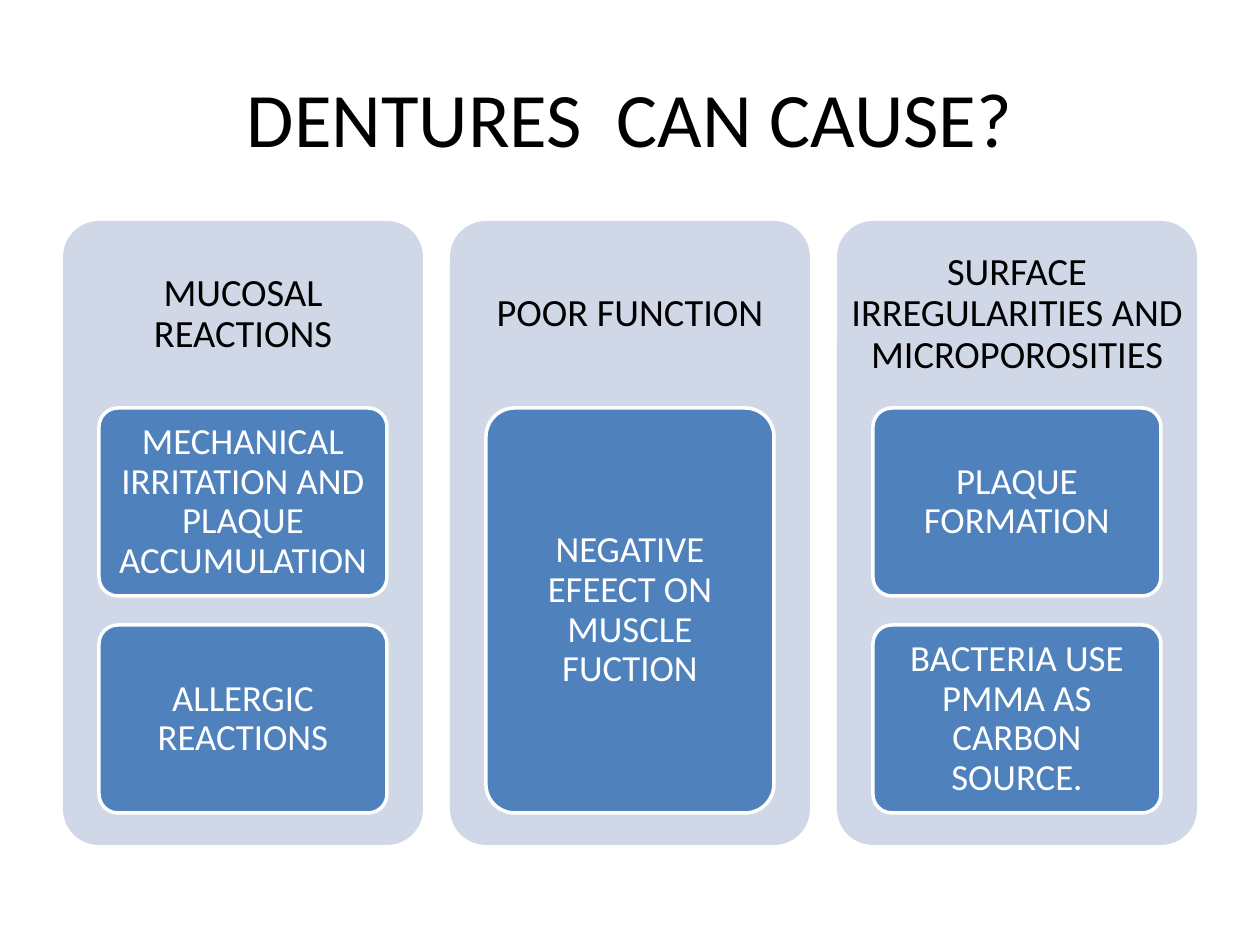
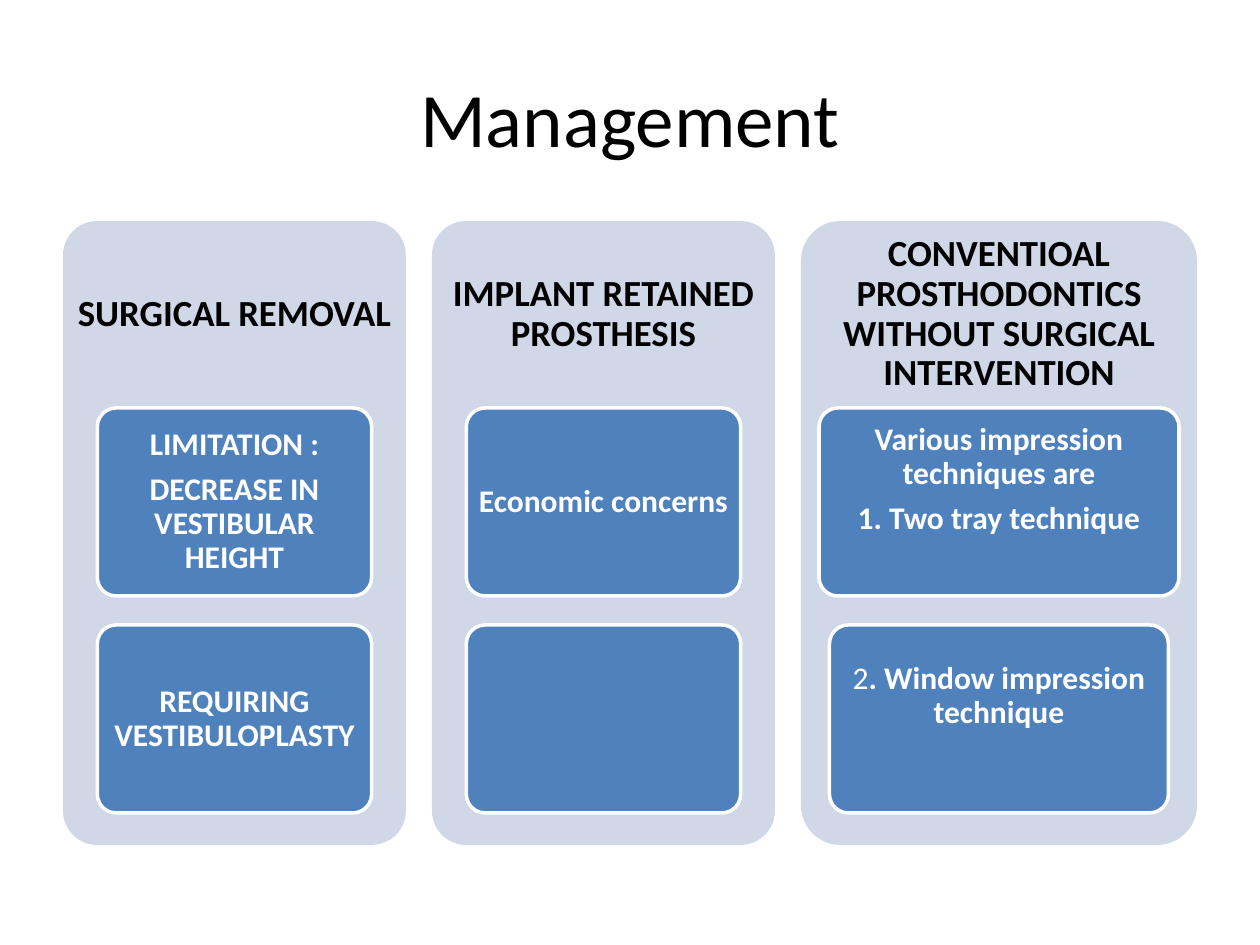
from dataclasses import dataclass
from pptx import Presentation
from pptx.dml.color import RGBColor
from pptx.enum.shapes import MSO_SHAPE
from pptx.enum.text import MSO_ANCHOR, PP_ALIGN
from pptx.util import Emu, Pt

ROUND = MSO_SHAPE.ROUNDED_RECTANGLE
MIDDLE = MSO_ANCHOR.MIDDLE
CENTER = PP_ALIGN.CENTER
PX = 914400 // 126


@dataclass(frozen=True)
class Theme:
    font: str = "Calibri"
    ink: str = "000000"
    paper: str = "FFFFFF"
    panel: str = "D0D8E8"
    card: str = "4F81BD"
    title: int = 44
    line: int = 2
    leading: float = 0.9
    after: float = 0.35


THEME = Theme()


def item(*paras, width=None, foot=0):
    return {"paras": paras, "width": width, "foot": foot}


SLIDES = [
    {
        "title": "DENTURES  CAN CAUSE?",
        "head": 22, "body": 21, "bold": False, "inset": 7, "gap": 27,
        "columns": [
            (360, "MUCOSAL REACTIONS", [
                item("MECHANICAL IRRITATION AND PLAQUE ACCUMULATION"),
                item("ALLERGIC REACTIONS")]),
            (360, "POOR FUNCTION", [
                item("NEGATIVE EFEECT ON MUSCLE FUCTION")]),
            (360, "SURFACE IRREGULARITIES AND MICROPOROSITIES", [
                item("PLAQUE FORMATION"),
                item("BACTERIA USE PMMA AS CARBON SOURCE.")]),
        ],
    },
    {
        "title": "Management",
        "head": 21, "body": 18, "bold": True, "inset": 5, "gap": 26,
        "columns": [
            (343, "SURGICAL REMOVAL", [
                item("LIMITATION :", "DECREASE IN VESTIBULAR HEIGHT"),
                item("REQUIRING VESTIBULOPLASTY")]),
            (343, "IMPLANT RETAINED PROSTHESIS", [
                item("Economic concerns"),
                item()]),
            (396, "CONVENTIOAL PROSTHODONTICS WITHOUT SURGICAL INTERVENTION", [
                item("Various impression techniques are", "1. Two tray technique",
                     width=360, foot=45),
                item([("2", False), (". Window impression technique", True)],
                     width=339, foot=45)]),
        ],
    },
]

LEFT, TOP, HEIGHT = 63, 221, 624
HEAD = 187
CARDS, STACK, SPACE = 408, 405, 29
SHARE = 0.8


def place(*box):
    return [Emu(round(n * PX)) for n in box]


def write(shape, paras, size, color, bold=False, inset=(11, 11), foot=0,
          leading=THEME.leading, after=THEME.after):
    frame = shape.text_frame
    frame.word_wrap = True
    frame.vertical_anchor = MIDDLE
    side, edge = inset
    frame.margin_left, frame.margin_right = place(side, side)
    frame.margin_top, frame.margin_bottom = place(edge, edge + foot)
    for n, text in enumerate(paras):
        para = frame.add_paragraph() if n else frame.paragraphs[0]
        para.alignment = CENTER
        para.line_spacing = leading
        para.space_after = Pt(round(size * after, 1))
        para.font.name = THEME.font
        para.font.size = Pt(size)
        para.font.color.rgb = RGBColor.from_string(color)
        if isinstance(text, str):
            para.font.bold = bold
            para.add_run().text = text
            continue
        for part, heavy in text:
            run = para.add_run()
            run.text = part
            run.font.bold = heavy


def label(slide, box, text, size, **style):
    shape = slide.shapes.add_textbox(*place(*box))
    write(shape, [text], size, THEME.ink, **style)


def panel(slide, box, fill, line=None):
    shape = slide.shapes.add_shape(ROUND, *place(*box))
    shape.adjustments[0] = 0.1
    shape.shadow.inherit = False
    shape.fill.solid()
    shape.fill.fore_color.rgb = RGBColor.from_string(fill)
    if line:
        shape.line.color.rgb = RGBColor.from_string(line)
        shape.line.width = Pt(THEME.line)
    else:
        shape.line.fill.background()
    return shape


def column(slide, data, left, width, head, items):
    panel(slide, (left, TOP, width, HEIGHT), THEME.panel)
    label(slide, (left, TOP, width, HEAD), head, data["head"], bold=data["bold"])
    high = (STACK - SPACE * (len(items) - 1)) / len(items)
    for n, entry in enumerate(items):
        wide = entry["width"] or width * SHARE
        box = (left + (width - wide) / 2, CARDS + n * (high + SPACE), wide, high)
        card = panel(slide, box, THEME.card, THEME.paper)
        write(card, entry["paras"], data["body"], THEME.paper, data["bold"],
              (data["inset"], 5), entry["foot"])


def main():
    deck = Presentation()
    deck.slide_width, deck.slide_height = place(1260, 945)
    for data in SLIDES:
        slide = deck.slides.add_slide(deck.slide_layouts[6])
        label(slide, (LEFT, 38, 1134, 158), data["title"], THEME.title,
              leading=1.0, after=0)
        left = LEFT
        for width, head, items in data["columns"]:
            column(slide, data, left, width, head, items)
            left += width + data["gap"]
    deck.save("out.pptx")


if __name__ == "__main__":
    main()
